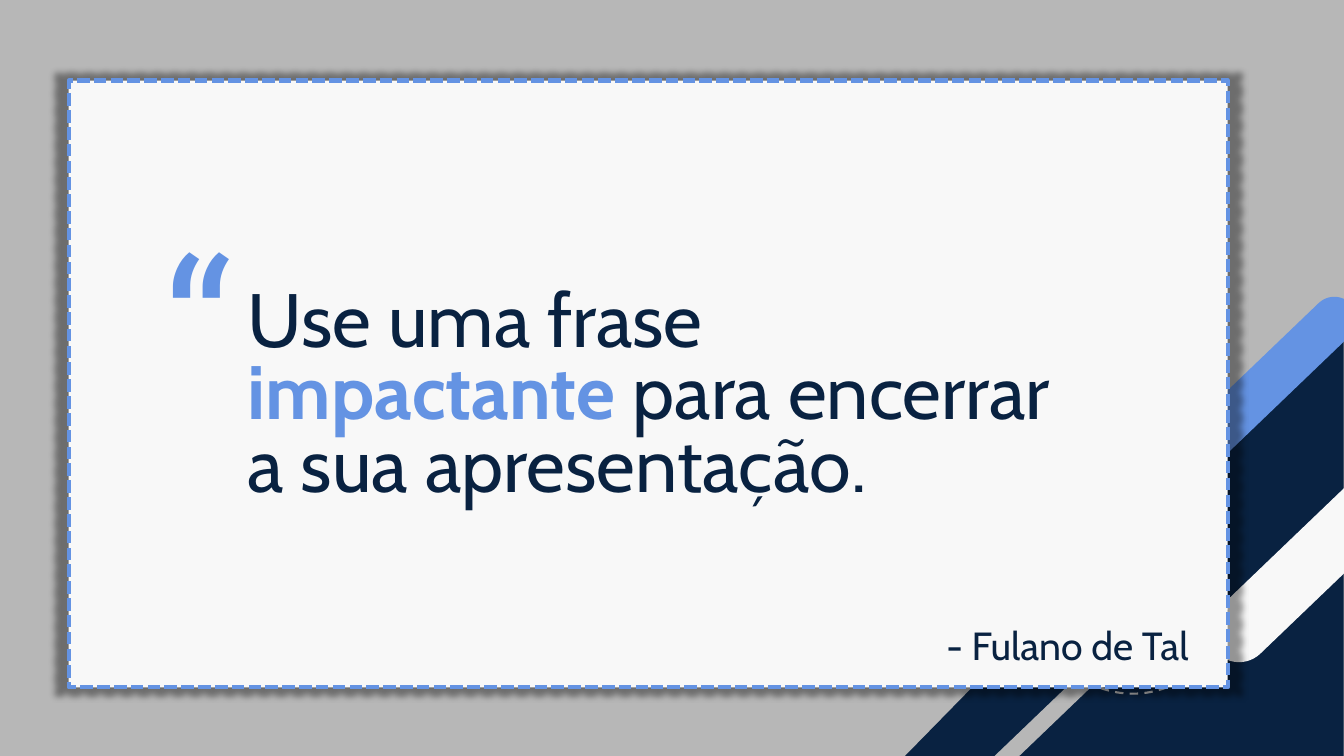
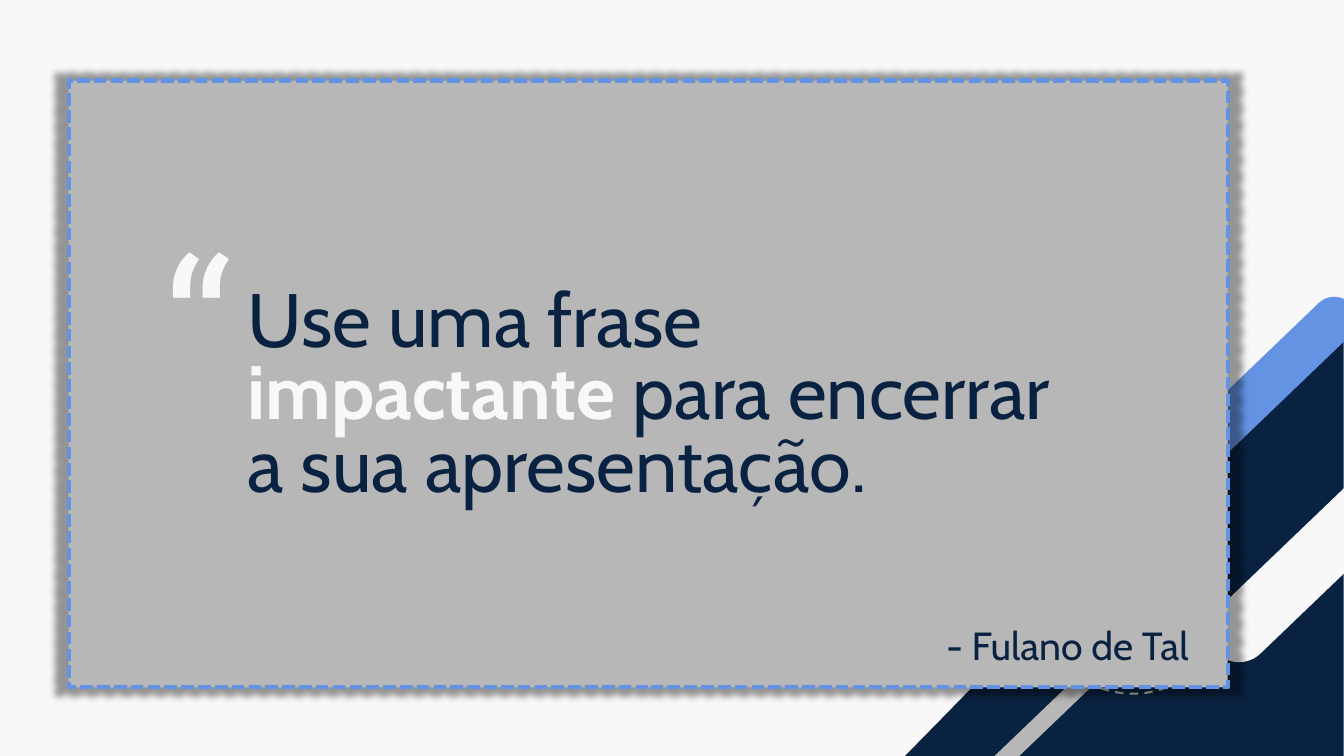
from lxml import etree
from pptx import Presentation
from pptx.dml.color import RGBColor
from pptx.enum.dml import MSO_LINE
from pptx.enum.shapes import MSO_SHAPE
from pptx.enum.text import MSO_AUTO_SIZE, PP_ALIGN
from pptx.oxml.ns import qn
from pptx.util import Cm, Pt

NAVY = "092241"
BLUE = "6493E3"
GRAY = "B7B7B7"
WHITE = "F8F8F8"
STRIPE_ANGLE = 316.2


def color(value):
    return RGBColor.from_string(value)


def add_shape(slide, kind, left, top, width, height, fill=None):
    """Add a preset shape without outline or shadow, sized in centimetres."""
    shape = slide.shapes.add_shape(kind, Cm(left), Cm(top), Cm(width), Cm(height))
    shape.shadow.inherit = False
    shape.line.fill.background()
    if fill:
        shape.fill.solid()
        shape.fill.fore_color.rgb = color(fill)
    else:
        shape.fill.background()
    return shape


def set_dashed_line(shape, line_color, width, dash):
    shape.line.color.rgb = color(line_color)
    shape.line.width = Pt(width)
    shape.line.dash_style = dash


def add_stripe(slide, left, top, width, height, fill):
    stripe = add_shape(slide, MSO_SHAPE.ROUNDED_RECTANGLE, left, top, width, height, fill)
    stripe.adjustments[0] = 0.5
    stripe.rotation = STRIPE_ANGLE


def add_corner(slide):
    """Add the navy corner with its diagonal stripes and dashed circle."""
    triangle = add_shape(slide, MSO_SHAPE.RIGHT_TRIANGLE, 22.81, 7.77, 11.05, 11.28, NAVY)
    triangle.element.spPr.find(qn("a:xfrm")).set("flipH", "1")
    add_stripe(slide, 29.77, 13.44, 6.45, 1.55, WHITE)
    add_stripe(slide, 24.28, 17.68, 4.6, 0.43, GRAY)
    circle = add_shape(slide, MSO_SHAPE.OVAL, 26.16, 12.7, 4.78, 4.78)
    set_dashed_line(circle, GRAY, 1.5, MSO_LINE.DASH)
    add_stripe(slide, 27.41, 9.75, 7.7, 1.14, BLUE)


def add_glow_shadow(shape):
    """Add a soft shadow slightly larger than the shape, centred behind it."""
    effects = shape.element.spPr.find(qn("a:effectLst"))
    shadow = etree.SubElement(effects, qn("a:outerShdw"), blurRad=str(Pt(5)),
                              sx="102000", sy="102000", algn="ctr", rotWithShape="0")
    shadow_color = etree.SubElement(shadow, qn("a:srgbClr"), val="000000")
    etree.SubElement(shadow_color, qn("a:alpha"), val="40000")


def add_card(slide, fill):
    card = add_shape(slide, MSO_SHAPE.RECTANGLE, 1.73, 2.03, 29.21, 15.29, fill)
    set_dashed_line(card, BLUE, 3, MSO_LINE.SQUARE_DOT)
    add_glow_shadow(card)


def add_text(slide, left, top, width, height, runs, size,
             font_name="Cabin", align=PP_ALIGN.LEFT):
    """Add one paragraph; runs holds (text, colour, bold) triples."""
    box = slide.shapes.add_textbox(Cm(left), Cm(top), Cm(width), Cm(height))
    frame = box.text_frame
    frame.word_wrap = True
    frame.auto_size = MSO_AUTO_SIZE.SHAPE_TO_FIT_TEXT
    paragraph = frame.paragraphs[0]
    paragraph.alignment = align
    paragraph.line_spacing = 0.8
    paragraph.font.name = font_name
    paragraph.font.size = Pt(size)
    for text, text_color, bold in runs:
        run = paragraph.add_run()
        run.text = text
        run.font.color.rgb = color(text_color)
        run.font.bold = bold


def add_quote_slide(presentation, background, card_fill, accent):
    slide = presentation.slides.add_slide(presentation.slide_layouts[6])
    slide.background.fill.solid()
    slide.background.fill.fore_color.rgb = color(background)
    add_corner(slide)
    add_card(slide, card_fill)
    quote = [
        ("Use uma frase ", NAVY, False),
        ("impactante", accent, True),
        (" para encerrar a sua apresentação.", NAVY, False),
    ]
    add_text(slide, 5.99, 7.16, 21.41, 5.84, quote, 54)
    add_text(slide, 14.27, 15.75, 15.93, 1.24, [("- Fulano de Tal", NAVY, False)], 28,
             align=PP_ALIGN.RIGHT)
    add_text(slide, 3.86, 6.2, 2.18, 4.98, [("“", accent, False)], 138,
             font_name="Roboto", align=PP_ALIGN.RIGHT)


def main():
    presentation = Presentation()
    presentation.slide_width = Cm(33.87)
    presentation.slide_height = Cm(19.05)
    add_quote_slide(presentation, background=GRAY, card_fill=WHITE, accent=BLUE)
    add_quote_slide(presentation, background=WHITE, card_fill=GRAY, accent=WHITE)
    presentation.save("out.pptx")


if __name__ == "__main__":
    main()
